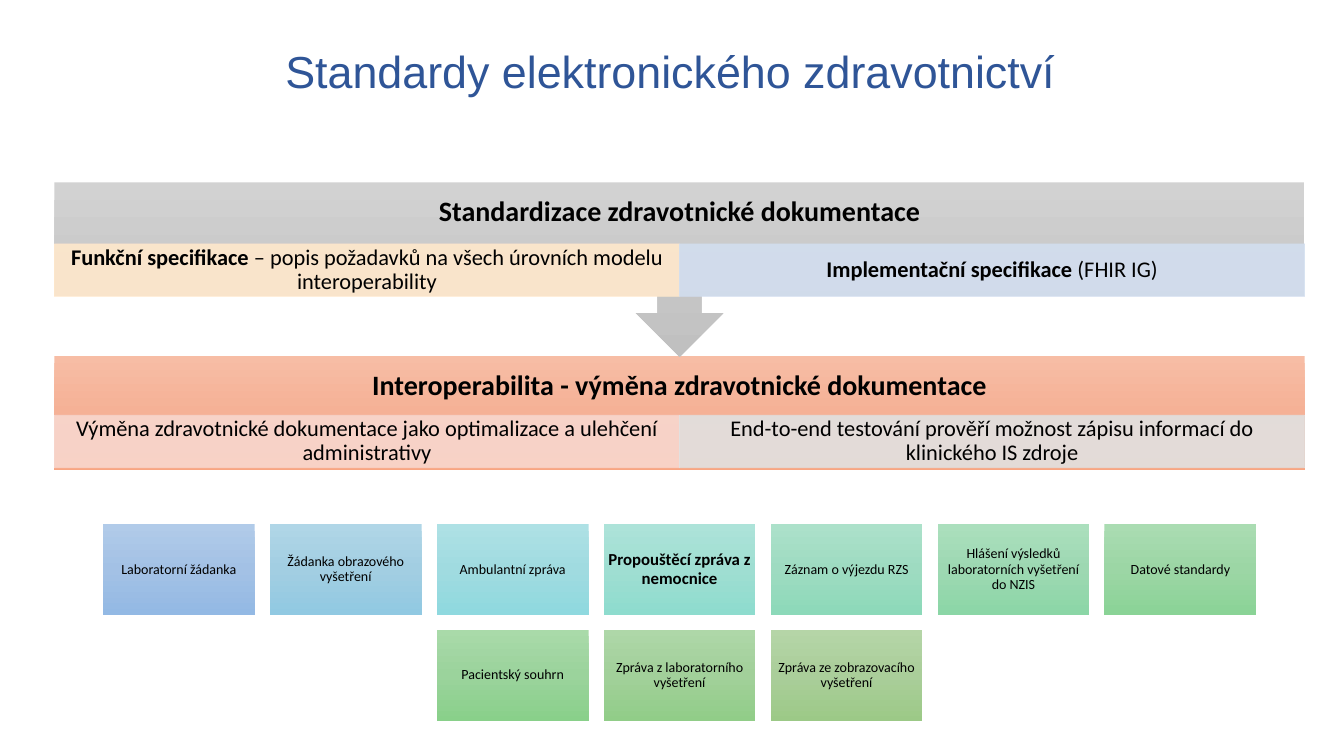
from lxml.etree import SubElement
from pptx import Presentation
from pptx.dml.color import RGBColor
from pptx.enum.shapes import MSO_SHAPE
from pptx.enum.text import MSO_ANCHOR, PP_ALIGN
from pptx.oxml.ns import qn
from pptx.util import Inches, Pt

BLACK = RGBColor(0, 0, 0)
TITLE_BLUE = RGBColor(0x2F, 0x55, 0x97)
CREAM = RGBColor(0xFF, 0xE8, 0xCC)
PALE_BLUE = RGBColor(0xD2, 0xDE, 0xEF)
PALE_SALMON = RGBColor(0xF8, 0xD7, 0xCE)
PALE_GRAY = RGBColor(0xE1, 0xE1, 0xE1)


def shades(*codes):
    return [RGBColor.from_string(code) for code in codes]


GRAY_SHADES = shades("D2D2D2", "C8C8C8", "C0C0C0")
SALMON_SHADES = shades("F7BDA5", "F5B196", "F8A582")

CENTER = 6.74
BAND_WIDTH = 12.4
BAND_LEFT = CENTER - BAND_WIDTH / 2
HALF_WIDTH = BAND_WIDTH / 2
HALF_HEIGHT = 0.52

TILE_AREA_WIDTH = 11.44
TILE_COLUMNS = 7
TILE_GAP = 0.15
TILE_WIDTH = (TILE_AREA_WIDTH - (TILE_COLUMNS - 1) * TILE_GAP) / TILE_COLUMNS
TILE_HEIGHT = 0.9
TILE_TOP = 5.2

TILE_ROWS = [
    [
        ("Laboratorní žádanka", shades("B1CBE9", "A3C1E5", "93B9E4")),
        ("Žádanka obrazového vyšetření", shades("B0D6E7", "A2CEE2", "91C9E2")),
        ("Ambulantní zpráva", shades("AEE1E5", "A0DBE0", "8FD9DF")),
        ("Propouštěcí zpráva z nemocnice", shades("ADE3D9", "9FDED2", "8EDCCE")),
        ("Záznam o výjezdu RZS", shades("ACE1CA", "9EDBC1", "8CD9B9")),
        ("Hlášení výsledků laboratorních vyšetření do NZIS",
         shades("ABDFBD", "9DD8B2", "8BD6A6")),
        ("Datové standardy", shades("AADCB2", "9CD6A5", "8AD396")),
    ],
    [
        ("Pacientský souhrn", shades("A9DAA9", "9BD39C", "89D08A")),
        ("Zpráva z laboratorního vyšetření", shades("AED7A8", "A2D09A", "91CD88")),
        ("Zpráva ze zobrazovacího vyšetření", shades("B5D5A7", "AACE9A", "9CC987")),
    ],
]
HIGHLIGHTED_TILE = "Propouštěcí zpráva z nemocnice"


def add_run(paragraph, text, size, color=BLACK, font="Calibri", bold=False):
    run = paragraph.add_run()
    run.text = text
    run.font.name = font
    run.font.size = Pt(size)
    run.font.bold = bold
    run.font.color.rgb = color


def set_insets(frame, left, top, right, bottom):
    frame.margin_left, frame.margin_top = Inches(left), Inches(top)
    frame.margin_right, frame.margin_bottom = Inches(right), Inches(bottom)


def add_box(slide, left, top, width, height, runs, size, insets, kind=MSO_SHAPE.RECTANGLE):
    shape = slide.shapes.add_shape(
        kind, Inches(left), Inches(top), Inches(width), Inches(height))
    shape.shadow.inherit = False
    shape.line.fill.background()
    frame = shape.text_frame
    frame.word_wrap = True
    frame.vertical_anchor = MSO_ANCHOR.MIDDLE
    set_insets(frame, *insets)
    paragraph = frame.paragraphs[0]
    paragraph.alignment = PP_ALIGN.CENTER
    paragraph.line_spacing = 0.9
    for text, bold in runs:
        add_run(paragraph, text, size, bold=bold)
    return shape


def fill_gradient(shape, colors):
    shape.fill.gradient()
    shape.fill.gradient_angle = 270
    stops = shape.fill._xPr.find(qn("a:gradFill")).find(qn("a:gsLst"))
    for stop in list(stops):
        stops.remove(stop)
    for index, color in enumerate(colors):
        stop = SubElement(stops, qn("a:gs"), pos=str(index * 50000))
        SubElement(stop, qn("a:srgbClr"), val=str(color))


def fill_translucent(shape, color):
    shape.fill.solid()
    shape.fill.fore_color.rgb = color
    shape.line.color.rgb = color
    shape.line.width = Pt(0.5)
    for element in shape._element.spPr.iter(qn("a:srgbClr")):
        SubElement(element, qn("a:alpha"), val="90000")


def add_band(slide, top, height, heading, colors, kind=MSO_SHAPE.RECTANGLE):
    band = add_box(slide, BAND_LEFT, top, BAND_WIDTH, height, [(heading, True)], 20,
                   (0.16, 0, 0.16, HALF_HEIGHT), kind)
    fill_gradient(band, colors)


def add_halves(slide, top, halves):
    for column, (runs, color) in enumerate(halves):
        half = add_box(slide, BAND_LEFT + column * HALF_WIDTH, top, HALF_WIDTH,
                       HALF_HEIGHT, runs, 16, (0.12, 0.02, 0.12, 0.02))
        fill_translucent(half, color)


def add_tiles(slide):
    for row, tiles in enumerate(TILE_ROWS):
        row_width = len(tiles) * (TILE_WIDTH + TILE_GAP) - TILE_GAP
        top = TILE_TOP + row * (TILE_HEIGHT + TILE_GAP)
        for column, (label, colors) in enumerate(tiles):
            left = CENTER - row_width / 2 + column * (TILE_WIDTH + TILE_GAP)
            highlighted = label == HIGHLIGHTED_TILE
            tile = add_box(slide, left, top, TILE_WIDTH, TILE_HEIGHT,
                           [(label, highlighted)], 12 if highlighted else 10, (0.04,) * 4)
            fill_gradient(tile, colors)


def format_title(slide):
    title = slide.shapes.title
    title.left, title.top = Inches(2.73), Inches(0.44)
    title.width, title.height = Inches(9.14), Inches(0.66)
    frame = title.text_frame
    frame.word_wrap = True
    frame.vertical_anchor = MSO_ANCHOR.TOP
    set_insets(frame, 0.1, 0.05, 0.1, 0.05)
    paragraph = frame.paragraphs[0]
    paragraph.alignment = PP_ALIGN.LEFT
    paragraph.line_spacing = 0.9
    add_run(paragraph, "Standardy elektronického zdravotnictví", 32, TITLE_BLUE, "Arial")


def main():
    presentation = Presentation()
    presentation.slide_width, presentation.slide_height = Inches(13.33), Inches(7.5)
    slide = presentation.slides.add_slide(presentation.slide_layouts[5])
    format_title(slide)
    add_band(slide, 3.53, 1.13, "Interoperabilita - výměna zdravotnické dokumentace",
             SALMON_SHADES)
    add_halves(slide, 4.12, [
        ([("Výměna zdravotnické dokumentace jako optimalizace a ulehčení administrativy",
           False)], PALE_SALMON),
        ([("End-to-end testování prověří možnost zápisu informací do klinického IS zdroje",
           False)], PALE_GRAY),
    ])
    add_band(slide, 1.81, 1.73, "Standardizace zdravotnické dokumentace",
             GRAY_SHADES, MSO_SHAPE.DOWN_ARROW_CALLOUT)
    add_halves(slide, 2.42, [
        ([("Funkční specifikace ", True),
          ("– popis požadavků na všech úrovních modelu interoperability", False)], CREAM),
        ([("Implementační specifikace ", True), ("(FHIR IG)", False)], PALE_BLUE),
    ])
    add_tiles(slide)
    presentation.save("out.pptx")


if __name__ == "__main__":
    main()
